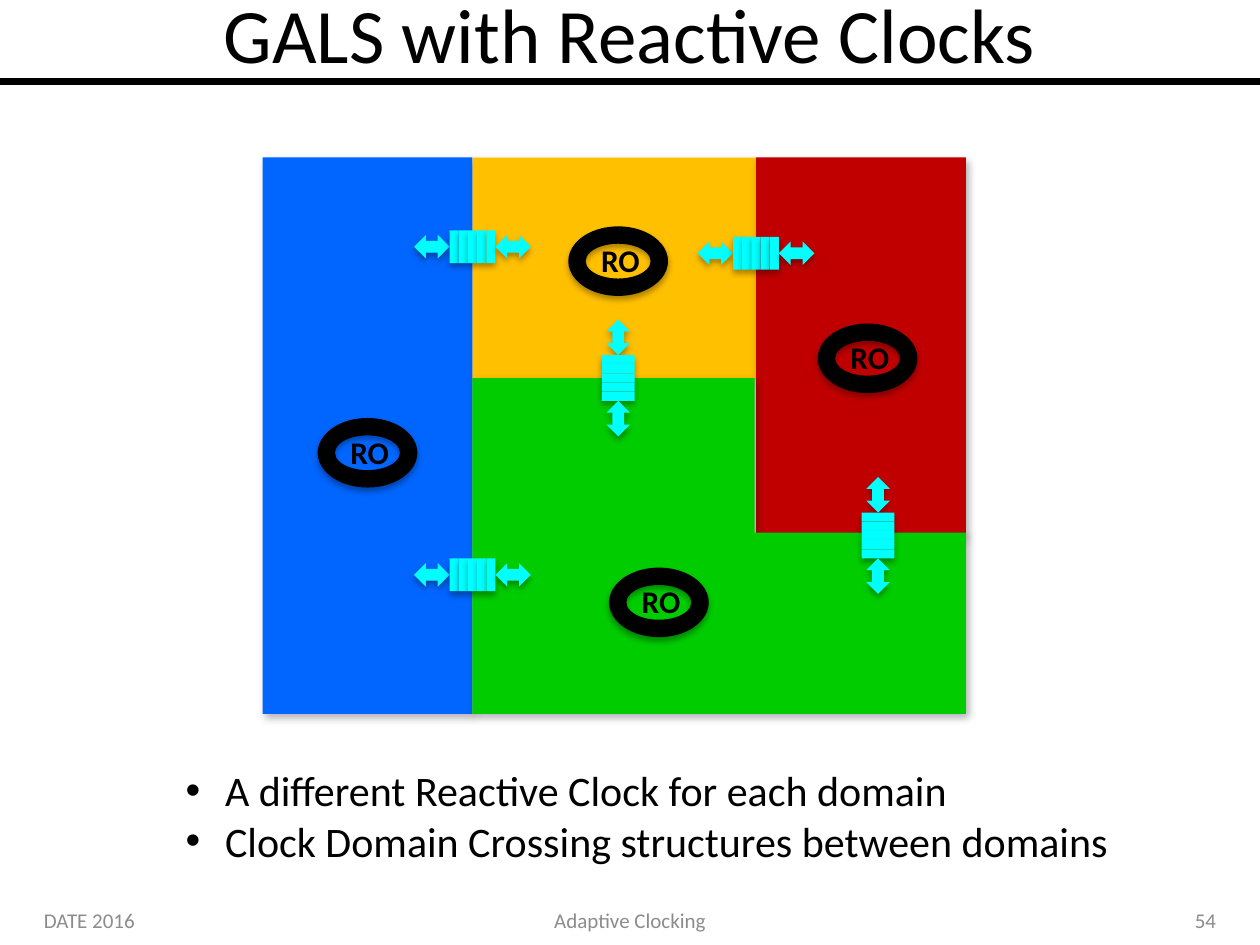
from dataclasses import dataclass
from typing import NamedTuple

from lxml.etree import SubElement
from pptx import Presentation
from pptx.dml.color import RGBColor
from pptx.enum.shapes import MSO_CONNECTOR, MSO_SHAPE
from pptx.enum.text import MSO_ANCHOR, MSO_AUTO_SIZE, PP_ALIGN
from pptx.oxml.ns import qn
from pptx.util import Emu, Pt

EMU_PER_PX = 9525


class Box(NamedTuple):
    left: float
    top: float
    width: int
    height: int


class Shadow(NamedTuple):
    alpha: int
    blur: float
    distance: float
    angle: int


@dataclass(frozen=True)
class Theme:
    font: str = "Calibri"
    ink: str = "000000"
    muted: str = "8C8C8C"
    blue: str = "0066FF"
    amber: str = "FFC000"
    red: str = "C00000"
    green: str = "00CC00"
    cyan: str = "00FFFF"
    title_size: int = 44
    bullet_size: int = 24
    label_size: int = 18
    footer_size: int = 12
    rule_width: int = 4
    domain_shadow: Shadow = Shadow(30, 4.5, 2.6, 53)
    part_shadow: Shadow = Shadow(32, 3.5, 2.2, 90)


THEME = Theme()


@dataclass(frozen=True)
class Domain:
    box: Box
    color: str
    kind: MSO_SHAPE = MSO_SHAPE.RECTANGLE
    adjustments: tuple[float, ...] = ()


@dataclass(frozen=True)
class Crossing:
    x: int
    y: int
    vertical: bool = False


class Oscillator(NamedTuple):
    x: int
    y: int


class Label(NamedTuple):
    text: str
    box: Box
    align: PP_ALIGN
    size: int
    color: str


DOMAINS = [
    Domain(Box(200, 120, 160, 424), THEME.blue),
    Domain(Box(360, 120, 216, 168), THEME.amber),
    Domain(Box(576, 120, 160, 288), THEME.red),
    Domain(Box(360, 288, 376, 256), THEME.green, MSO_SHAPE.CORNER, (0.54, 0.84)),
]
CROSSINGS = [
    Crossing(360, 188),
    Crossing(576, 193),
    Crossing(360, 438),
    Crossing(669, 408, vertical=True),
    Crossing(471, 288, vertical=True),
]
OSCILLATORS = [
    Oscillator(280, 345),
    Oscillator(502, 459),
    Oscillator(471, 199),
    Oscillator(661, 273),
]
LABELS = [
    Label("GALS with Reactive Clocks", Box(48, -11, 864, 72),
          PP_ALIGN.CENTER, THEME.title_size, THEME.ink),
    Label("DATE 2016", Box(24, 682, 224, 38),
          PP_ALIGN.LEFT, THEME.footer_size, THEME.muted),
    Label("Adaptive Clocking", Box(328, 682, 304, 38),
          PP_ALIGN.CENTER, THEME.footer_size, THEME.muted),
    Label("54", Box(712, 682, 224, 38),
          PP_ALIGN.RIGHT, THEME.footer_size, THEME.muted),
]
BULLETS = [
    "A different Reactive Clock for each domain",
    "Clock Domain Crossing structures between domains",
]
BULLET_INDENT = 30
STAGE_COUNT, STAGE_PITCH, STAGE_HEIGHT = 5, 7, 25
ARROW_WIDTH, ARROW_HEIGHT, ARROW_OFFSET = 27, 18, 31


def px(length: float) -> Emu:
    return Emu(round(length * EMU_PER_PX))


def centred(x: int, y: int, width: int, height: int) -> Box:
    return Box(x - width / 2, y - height / 2, width, height)


def add_solid(shapes, kind: MSO_SHAPE, box: Box, color: str, shadow: Shadow):
    shape = shapes.add_shape(kind, *map(px, box))
    shape.fill.solid()
    shape.fill.fore_color.rgb = RGBColor.from_string(color)
    shape.line.fill.background()
    shape.shadow.inherit = False
    effects = shape._element.spPr.find(qn("a:effectLst"))
    outer = SubElement(effects, qn("a:outerShdw"), {
        "blurRad": str(Pt(shadow.blur)),
        "dist": str(Pt(shadow.distance)),
        "dir": str(shadow.angle * 60000),
        "rotWithShape": "0",
    })
    tint = SubElement(outer, qn("a:srgbClr"), val=THEME.ink)
    SubElement(tint, qn("a:alpha"), val=str(shadow.alpha * 1000))
    return shape


def add_text(shapes, text: str, box: Box, size: int, color: str,
             align: PP_ALIGN = PP_ALIGN.LEFT, bold: bool = False,
             wrap: bool = False):
    frame = shapes.add_textbox(*map(px, box)).text_frame
    frame.text = text
    frame.word_wrap = wrap
    frame.auto_size = MSO_AUTO_SIZE.NONE if wrap else MSO_AUTO_SIZE.SHAPE_TO_FIT_TEXT
    frame.vertical_anchor = MSO_ANCHOR.MIDDLE if wrap else MSO_ANCHOR.TOP
    for para in frame.paragraphs:
        para.alignment = align
        for span in para.runs:
            span.font.name = THEME.font
            span.font.size = Pt(size)
            span.font.bold = bold
            span.font.color.rgb = RGBColor.from_string(color)
    return frame


def add_rule(shapes, y: int, width: int) -> None:
    rule = shapes.add_connector(MSO_CONNECTOR.STRAIGHT, 0, px(y), px(width), px(y))
    rule.line.color.rgb = RGBColor.from_string(THEME.ink)
    rule.line.width = Pt(THEME.rule_width)
    SubElement(rule._element.spPr, qn("a:effectLst"))


def add_domain(shapes, domain: Domain) -> None:
    shape = add_solid(shapes, domain.kind, domain.box, domain.color, THEME.domain_shadow)
    for index, value in enumerate(domain.adjustments):
        shape.adjustments[index] = value


def add_crossing(shapes, crossing: Crossing) -> None:
    group = shapes.add_group_shape()
    arrow = (MSO_SHAPE.LEFT_RIGHT_ARROW, ARROW_WIDTH, ARROW_HEIGHT)
    stage = (MSO_SHAPE.RECTANGLE, STAGE_PITCH, STAGE_HEIGHT)
    stages = [((index - STAGE_COUNT // 2) * STAGE_PITCH, *stage)
              for index in range(STAGE_COUNT)]
    parts = [(-ARROW_OFFSET, *arrow), *stages, (ARROW_OFFSET, *arrow)]
    for offset, kind, width, height in parts:
        x = crossing.x + (0 if crossing.vertical else offset)
        y = crossing.y + (offset if crossing.vertical else 0)
        part = add_solid(group.shapes, kind, centred(x, y, width, height),
                         THEME.cyan, THEME.part_shadow)
        part.rotation = 90 if crossing.vertical else 0


def add_oscillator(shapes, oscillator: Oscillator) -> None:
    group = shapes.add_group_shape()
    x, y = oscillator
    add_solid(group.shapes, MSO_SHAPE.DONUT, centred(x, y, 76, 53),
              THEME.ink, THEME.part_shadow)
    add_text(group.shapes, "RO", centred(x + 2, y - 1, 49, 38),
             THEME.label_size, THEME.ink, bold=True)


def add_bullets(shapes, lines: list[str], box: Box) -> None:
    frame = add_text(shapes, "\n".join(lines), box, THEME.bullet_size, THEME.ink)
    for para in frame.paragraphs:
        properties = para._p.get_or_add_pPr()
        properties.set("marL", str(px(BULLET_INDENT)))
        properties.set("indent", str(px(-BULLET_INDENT)))
        SubElement(properties, qn("a:buFont"), typeface="Arial")
        SubElement(properties, qn("a:buChar"), char="•")


def main() -> None:
    deck = Presentation()
    deck.slide_width, deck.slide_height = px(960), px(720)
    page = deck.slides.add_slide(deck.slide_layouts[6])
    shapes = page.shapes
    add_rule(shapes, 62, 960)
    for label in LABELS:
        add_text(shapes, label.text, label.box, label.size, label.color,
                 label.align, wrap=True)
    for domain in DOMAINS:
        add_domain(shapes, domain)
    for crossing in CROSSINGS:
        add_crossing(shapes, crossing)
    for oscillator in OSCILLATORS:
        add_oscillator(shapes, oscillator)
    add_bullets(shapes, BULLETS, Box(132, 578, 729, 87))
    deck.save("out.pptx")


if __name__ == "__main__":
    main()
